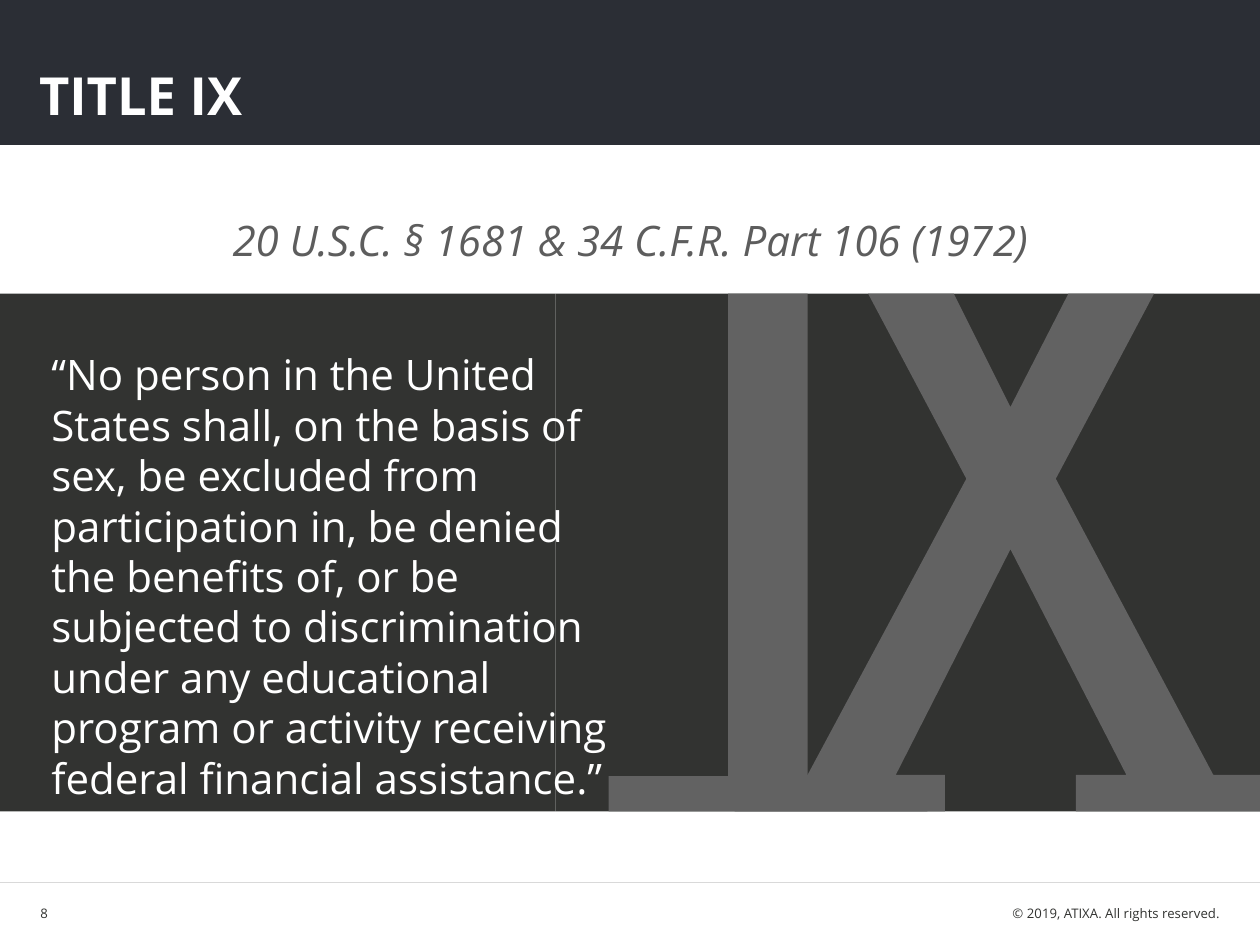
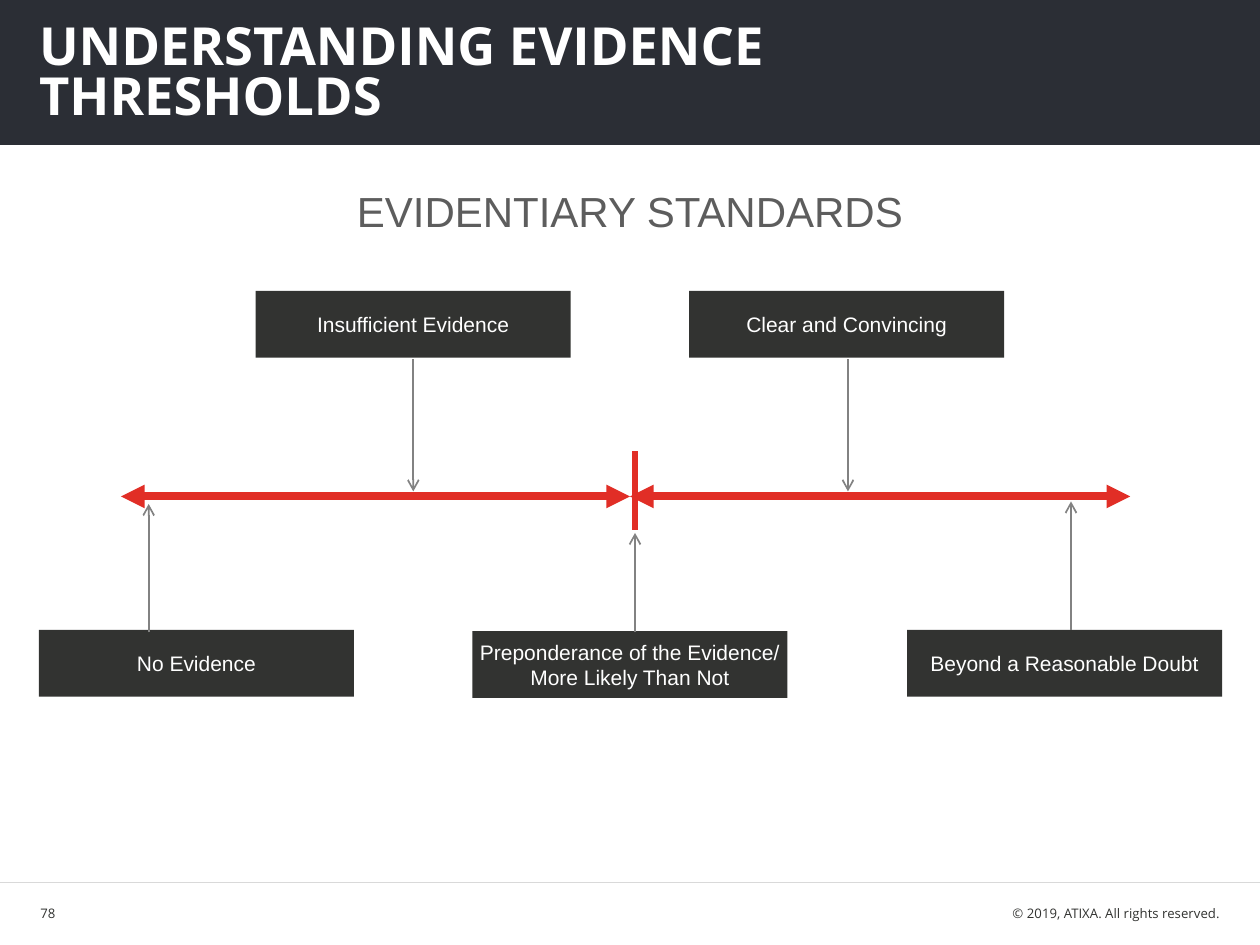
from lxml.etree import SubElement
from pptx import Presentation
from pptx.dml.color import RGBColor
from pptx.enum.shapes import MSO_CONNECTOR, MSO_SHAPE
from pptx.enum.text import MSO_ANCHOR, MSO_AUTO_SIZE, PP_ALIGN
from pptx.oxml.ns import qn
from pptx.util import Inches, Pt

COLORS = {
    "band": "2B2E35",
    "panel": "323331",
    "numeral": "626262",
    "subtitle": "5D5D5D",
    "arrow": "828282",
    "scale": "E12E26",
    "rule": "D9D9D9",
    "white": "FFFFFF",
}
HEADING_FONT = "Open Sans"
DIAGRAM_FONT = "Arial"
MARGIN = 0.31
NUMERAL_ONE = [
    (2.95, 4.11), (2.95, 3.83), (2, 3.83), (2, 0),
    (1.37, 0), (1.37, 3.83), (0.42, 3.83), (0.42, 4.11),
]
NUMERAL_TEN = [
    (4.13, 4.11), (5.59, 4.11), (5.59, 3.82), (5.22, 3.82), (3.97, 1.47),
    (4.75, 0), (4.07, 0), (3.61, 0.9), (3.16, 0), (2.48, 0),
    (3.26, 1.47), (2, 3.82), (1.42, 3.82), (1.42, 4.11), (3.09, 4.11),
    (3.09, 3.82), (2.7, 3.82), (3.61, 2.03), (4.53, 3.82), (4.13, 3.82),
]


def color(name):
    """Return a named colour of the palette."""
    return RGBColor.from_string(COLORS[name])


def paint(shape, fill):
    """Give a shape a flat fill without outline or shadow."""
    shape.shadow.inherit = False
    shape.fill.solid()
    shape.fill.fore_color.rgb = color(fill)
    shape.line.fill.background()


def write(shape, text, size, ink, font=HEADING_FONT, align=PP_ALIGN.LEFT,
          anchor=MSO_ANCHOR.TOP, inset=True):
    """Write one formatted paragraph into a shape and return it."""
    frame = shape.text_frame
    frame.word_wrap = True
    frame.auto_size = MSO_AUTO_SIZE.NONE
    frame.vertical_anchor = anchor
    if not inset:
        frame.margin_left = frame.margin_right = 0
        frame.margin_top = frame.margin_bottom = 0
    paragraph = frame.paragraphs[0]
    paragraph.text = text
    paragraph.alignment = align
    paragraph.font.name = font
    paragraph.font.size = Pt(size)
    paragraph.font.color.rgb = color(ink)
    return paragraph


def add_rectangle(slide, box, fill):
    """Add a flat rectangle."""
    shape = slide.shapes.add_shape(MSO_SHAPE.RECTANGLE, *map(Inches, box))
    paint(shape, fill)
    return shape


def add_text(slide, box, text, size, ink, **style):
    """Add a text box holding one paragraph."""
    shape = slide.shapes.add_textbox(*map(Inches, box))
    return write(shape, text, size, ink, **style)


def add_line(slide, start, end, ink, width, head=None, tail=None):
    """Add a straight line with optional arrowheads."""
    line = slide.shapes.add_connector(
        MSO_CONNECTOR.STRAIGHT, *map(Inches, (*start, *end)))
    line.line.color.rgb = color(ink)
    line.line.width = Pt(width)
    properties = line.element.spPr
    outline = properties.find(qn("a:ln"))
    for tag, kind in (("a:headEnd", head), ("a:tailEnd", tail)):
        if kind:
            SubElement(outline, qn(tag), type=kind)
    SubElement(properties, qn("a:effectLst"))


def add_base_slide(presentation, title_text, number):
    """Add a slide with the title band and the footer."""
    slide = presentation.slides.add_slide(presentation.slide_layouts[5])
    title = slide.shapes.title
    band = add_rectangle(slide, (0, 0, 10, 1.15), "band")
    title.element.addprevious(band.element)
    title.left, title.top = Inches(MARGIN), Inches(0.25)
    title.width, title.height = Inches(8.38), Inches(0.75)
    paragraph = write(title, title_text, 30, "white",
                      anchor=MSO_ANCHOR.BOTTOM, inset=False)
    paragraph.font.bold = True
    paragraph.line_spacing = 0.8
    add_footer(slide, 7, number)
    return slide


def add_footer(slide, top, number):
    """Add the rule, page number and copyright line."""
    add_line(slide, (0, top), (10, top), "rule", 0.5)
    style = {"anchor": MSO_ANCHOR.MIDDLE, "inset": False}
    add_text(slide, (0.32, top, 0.2, 0.5), str(number), 7.5, "panel", **style)
    add_text(slide, (7.37, top, 2.31, 0.5), "© 2019, ATIXA. All rights reserved.",
             7.5, "panel", align=PP_ALIGN.RIGHT, **style)


def add_numeral_panel(slide, left, top, width, height):
    """Add the dark panel with the large cropped numeral."""
    add_rectangle(slide, (left, top, width, height), "panel")
    for outline in (NUMERAL_ONE, NUMERAL_TEN):
        points = [(Inches(left + x), Inches(top + y)) for x, y in outline]
        builder = slide.shapes.build_freeform(*points[0])
        builder.add_line_segments(points[1:], close=True)
        paint(builder.convert_to_shape(), "numeral")


def add_quote_panel(slide, left, top, width, height):
    """Add the dark panel with the quoted statute."""
    add_rectangle(slide, (left, top, width, height), "panel")
    add_text(
        slide, (left + MARGIN, top + 0.39, 4.69, 3.33),
        "“No person in the United States shall, on the basis of sex, be excluded "
        "from participation in, be denied the benefits of, or be subjected to "
        "discrimination under any educational program or activity receiving "
        "federal financial assistance.”", 24, "white")


def add_statute_slide(presentation):
    """Build the slide that quotes the statute."""
    slide = add_base_slide(presentation, "TITLE IX", 8)
    citation = add_text(slide, (MARGIN, 1.65, 9.39, 0.5),
                        "20 U.S.C. § 1681 & 34 C.F.R. Part 106 (1972)",
                        24, "subtitle", align=PP_ALIGN.CENTER)
    citation.font.italic = True
    split, top, height = 4.41, 2.33, 4.11
    add_numeral_panel(slide, split, top, 10 - split, height)
    add_quote_panel(slide, 0, top, split, height)


def add_evidence_scale(slide, left, middle, right, level):
    """Add the two double arrows and the mark between them."""
    for start, end in ((left, middle), (middle, right)):
        add_line(slide, (start, level), (end, level), "scale", 4.5,
                 head="triangle", tail="triangle")
    mark = middle + 0.04
    add_line(slide, (mark, level - 0.36), (mark, level + 0.27), "scale", 3)


def add_standard(slide, left, top, text, arrow_x, arrow_start, arrow_end):
    """Add a labelled standard and its arrow to the scale."""
    box = add_rectangle(slide, (left, top, 2.5, 0.53), "panel")
    write(box, text, 12, "white", font=DIAGRAM_FONT, align=PP_ALIGN.CENTER,
          anchor=MSO_ANCHOR.MIDDLE, inset=False)
    add_line(slide, (arrow_x, arrow_start), (arrow_x, arrow_end),
             "arrow", 1, tail="arrow")


def add_thresholds_slide(presentation):
    """Build the slide with the scale of evidentiary standards."""
    slide = add_base_slide(presentation, "UNDERSTANDING EVIDENCE THRESHOLDS", 78)
    add_evidence_scale(slide, 0.96, 5, 8.97, 3.94)
    add_text(slide, (2.71, 1.42, 4.58, 0.5), "EVIDENTIARY STANDARDS", 24,
             "subtitle", font=DIAGRAM_FONT, align=PP_ALIGN.CENTER)
    standards = [
        (MARGIN, 5, "No Evidence", 1.18, 5.02, 4),
        (2.03, 2.31, "Insufficient Evidence", 3.28, 2.85, 3.9),
        (3.75, 5.01, "Preponderance of the Evidence/ More Likely Than Not",
         5.04, 5.02, 4.23),
        (5.47, 2.31, "Clear and Convincing", 6.73, 2.85, 3.9),
        (7.2, 5, "Beyond a Reasonable Doubt", 8.5, 5, 3.98),
    ]
    for standard in standards:
        add_standard(slide, *standard)


def main():
    """Build and save the presentation."""
    presentation = Presentation()
    presentation.slide_width = Inches(10)
    presentation.slide_height = Inches(7.5)
    add_statute_slide(presentation)
    add_thresholds_slide(presentation)
    presentation.save("out.pptx")


if __name__ == "__main__":
    main()
